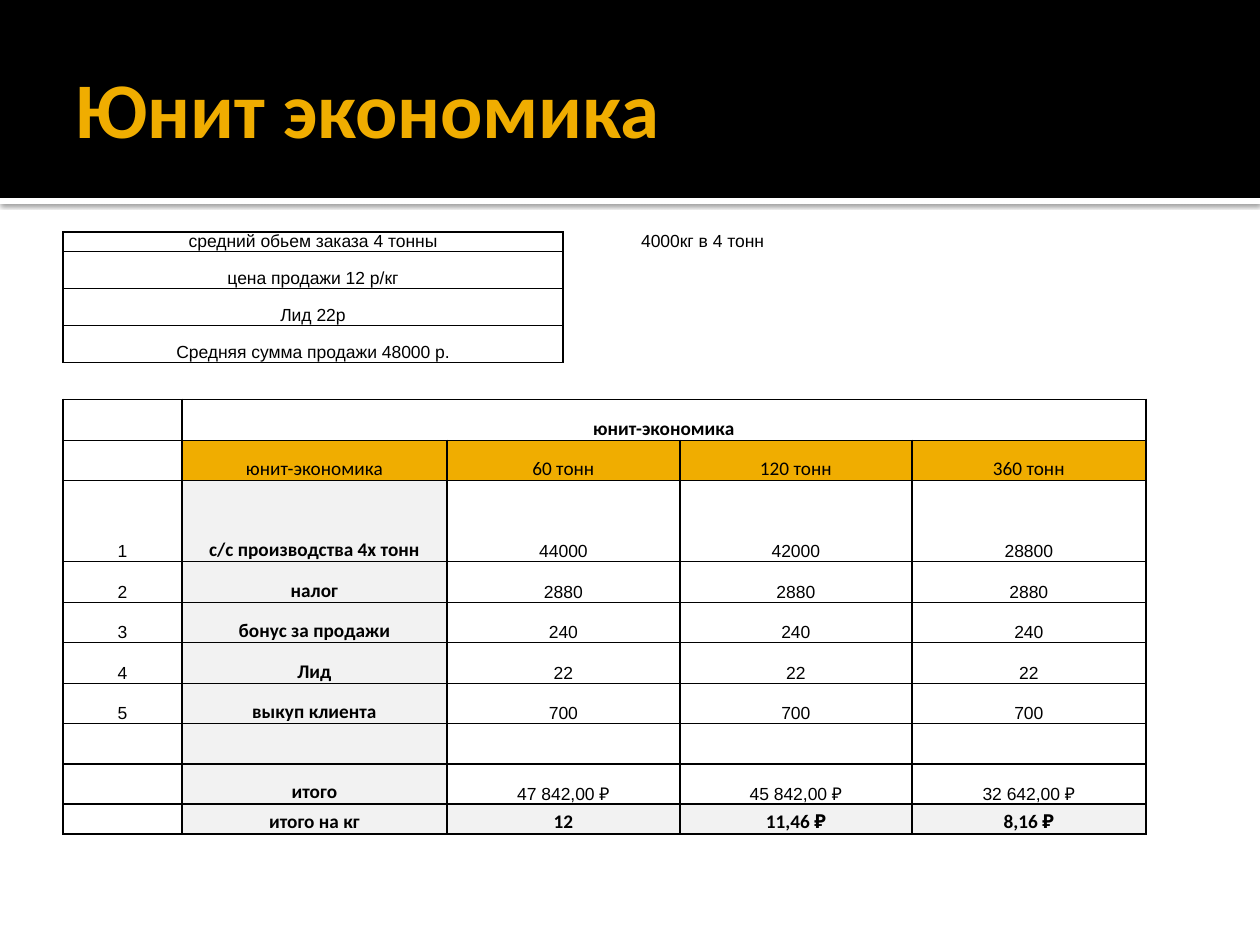
from lxml.etree import SubElement
from pptx import Presentation
from pptx.dml.color import RGBColor
from pptx.enum.shapes import MSO_SHAPE
from pptx.enum.text import MSO_ANCHOR, PP_ALIGN
from pptx.oxml.ns import qn
from pptx.util import Emu, Pt

BLACK = RGBColor(0x00, 0x00, 0x00)
WHITE = RGBColor(0xFF, 0xFF, 0xFF)
AMBER = RGBColor(0xF0, 0xAD, 0x00)
GREY = RGBColor(0xF2, 0xF2, 0xF2)
PLAIN_TABLE = "{2D5ABB26-0587-4C30-8999-92F81FD0307C}"

COLUMNS = [119, 142, 123, 116, 117, 116, 116, 117, 117]
ROWS = [19] + [37] * 4 + [41, 40, 81] + [41, 40] * 3 + [30]
ASSUMPTIONS = [
    "средний обьем заказа 4 тонны",
    "цена продажи 12 р/кг",
    "Лид 22р",
    "Средняя сумма продажи 48000 р.",
]
HEADINGS = ["", "юнит-экономика", "60 тонн", "120 тонн", "360 тонн"]
COSTS = [
    ["1", "с/с производства 4х тонн", "44000", "42000", "28800"],
    ["2", "налог", "2880", "2880", "2880"],
    ["3", "бонус за продажи", "240", "240", "240"],
    ["4", "Лид", "22", "22", "22"],
    ["5", "выкуп клиента", "700", "700", "700"],
    ["", "", "", "", ""],
    ["", "итого", "47 842,00 ₽", "45 842,00 ₽", "32 642,00 ₽"],
]
TOTALS = ["", "итого на кг", "12", "11,46 ₽", "8,16 ₽"]
GAP_ROW = len(ASSUMPTIONS)
NOTE_COLUMN = 4


def px(length):
    """Turn whole pixels, 126 to the inch, into EMU."""
    return Emu(round(length * 914400 / 126))


def write_text(frame, text, size=10, font="Arial", color=BLACK, bold=False,
               align=PP_ALIGN.CENTER):
    """Write one formatted line into a text frame."""
    para = frame.paragraphs[0]
    para.alignment = align
    if text:
        span = para.add_run()
        span.text = text
        span.font.size = Pt(size)
        span.font.name = font
        span.font.bold = bold
        span.font.color.rgb = color


def border_sides(row, column):
    """Name the ruled sides of a cell."""
    if row > GAP_ROW or (row < GAP_ROW and column < NOTE_COLUMN):
        return "LRTB"
    if row == GAP_ROW:
        return "TB" if column < NOTE_COLUMN else "B"
    return "L" if column == NOTE_COLUMN else ""


class SlideBuilder:
    """Hold the style and the current slide."""

    heading = {"size": 11, "font": "Calibri"}
    label = {**heading, "bold": True}

    def __init__(self, page):
        """Keep the page to draw on."""
        self.page = page

    def bar(self, top, height, color, shadow=False):
        """Draw a band across the whole page."""
        box = self.page.shapes.add_shape(
            MSO_SHAPE.RECTANGLE, 0, px(top), px(1260), px(height))
        box.shadow.inherit = False
        box.fill.solid()
        box.fill.fore_color.rgb = color
        box.line.fill.background()
        if shadow:
            effects = box.element.spPr.find(qn("a:effectLst"))
            outer = SubElement(effects, qn("a:outerShdw"), blurRad=str(Pt(2.5)),
                               dist=str(Pt(0.8)), dir="5400000", algn="tl",
                               rotWithShape="0")
            tint = SubElement(outer, qn("a:srgbClr"), val=str(BLACK))
            SubElement(tint, qn("a:alpha"), val="60000")

    def title(self, text, left, top, width, height):
        """Place the title in front of the bands."""
        box = self.page.shapes.title
        box.element.getparent().append(box.element)
        box.left, box.top, box.width, box.height = map(px, (left, top, width, height))
        frame = box.text_frame
        frame.vertical_anchor = MSO_ANCHOR.MIDDLE
        frame.margin_left = px(13)
        frame.margin_right = frame.margin_top = frame.margin_bottom = px(6)
        write_text(frame, text, size=45, font="Calibri", color=AMBER, bold=True,
                   align=PP_ALIGN.LEFT)

    def table(self, left, top):
        """Add a plain table without text or rules."""
        holder = self.page.shapes.add_table(
            len(ROWS), len(COLUMNS), px(left), px(top), px(sum(COLUMNS)), px(sum(ROWS)))
        grid = holder.table
        grid.first_row = grid.horz_banding = False
        holder.element.find(".//" + qn("a:tableStyleId")).text = PLAIN_TABLE
        for column, width in zip(grid.columns, COLUMNS):
            column.width = px(width)
        for row, height in zip(grid.rows, ROWS):
            row.height = px(height)
        for cell in grid.iter_cells():
            cell.margin_left = cell.margin_right = cell.margin_top = cell.margin_bottom = 0
            cell.vertical_anchor = MSO_ANCHOR.BOTTOM
            para = cell.text_frame.paragraphs[0]
            ending = SubElement(para._p, qn("a:endParaRPr"), sz="1000")
            SubElement(ending, qn("a:latin"), typeface="Arial")
            cell.fill.background()
        return grid

    def rules(self, grid):
        """Rule every visible cell and clear its other sides."""
        for row in range(len(ROWS)):
            for column in range(len(COLUMNS)):
                cell = grid.cell(row, column)
                if cell.is_spanned:
                    continue
                properties = cell._tc.get_or_add_tcPr()
                ruled = border_sides(row, column)
                for place, side in enumerate("LRTB"):
                    line = SubElement(properties, qn("a:ln" + side), w=str(Pt(1)))
                    properties.insert(place, line)
                    if side in ruled:
                        fill = SubElement(line, qn("a:solidFill"))
                        SubElement(fill, qn("a:srgbClr"), val=str(BLACK))
                    else:
                        SubElement(line, qn("a:noFill"))

    def entry(self, grid, row, column, text, columns=1, fill=None, **style):
        """Fill one cell that may run over several columns."""
        cell = grid.cell(row, column)
        if columns > 1:
            cell.merge(grid.cell(row, column + columns - 1))
        if fill is not None:
            cell.fill.solid()
            cell.fill.fore_color.rgb = fill
        write_text(cell.text_frame, text, **style)

    def record(self, grid, row, texts, label, value, label_fill, value_fill):
        """Fill a row of number, label and three values."""
        number, name, *values = texts
        self.entry(grid, row, 0, number)
        self.entry(grid, row, 1, name, columns=2, fill=label_fill, **label)
        for index, text in enumerate(values):
            self.entry(grid, row, 3 + 2 * index, text, columns=2, fill=value_fill, **value)


def main():
    """Build and save the deck."""
    deck = Presentation()
    deck.slide_width, deck.slide_height = px(1260), px(945)
    builder = SlideBuilder(deck.slides.add_slide(deck.slide_layouts[5]))
    builder.bar(198, 6, WHITE, shadow=True)
    builder.bar(0, 198, BLACK)
    builder.title("Юнит экономика", 63, 21, 1134, 173)

    grid = builder.table(63, 232)
    for row, text in enumerate(ASSUMPTIONS):
        builder.entry(grid, row, 0, text, columns=4)
    builder.entry(grid, 0, NOTE_COLUMN, "4000", align=PP_ALIGN.RIGHT)
    builder.entry(grid, 0, NOTE_COLUMN + 1, "кг в 4 тонн", columns=2, align=PP_ALIGN.LEFT)

    first = GAP_ROW + 1
    label, heading = builder.label, builder.heading
    builder.entry(grid, first, 1, "юнит-экономика", columns=8, **label)
    builder.record(grid, first + 1, HEADINGS, heading, heading, AMBER, AMBER)
    for row, texts in enumerate(COSTS, first + 2):
        builder.record(grid, row, texts, label, {}, GREY, None)
    builder.record(grid, len(ROWS) - 1, TOTALS, label, label, GREY, GREY)
    builder.rules(grid)
    deck.save("out.pptx")


if __name__ == "__main__":
    main()
